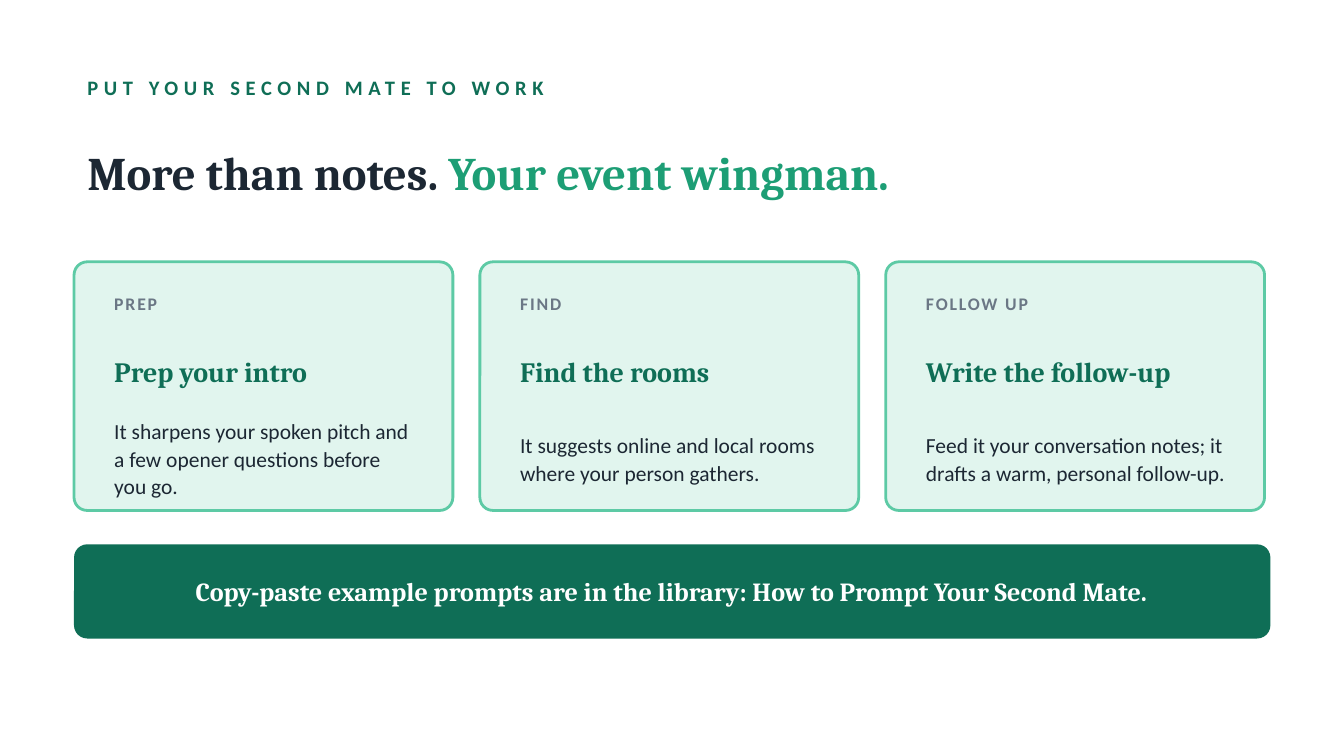
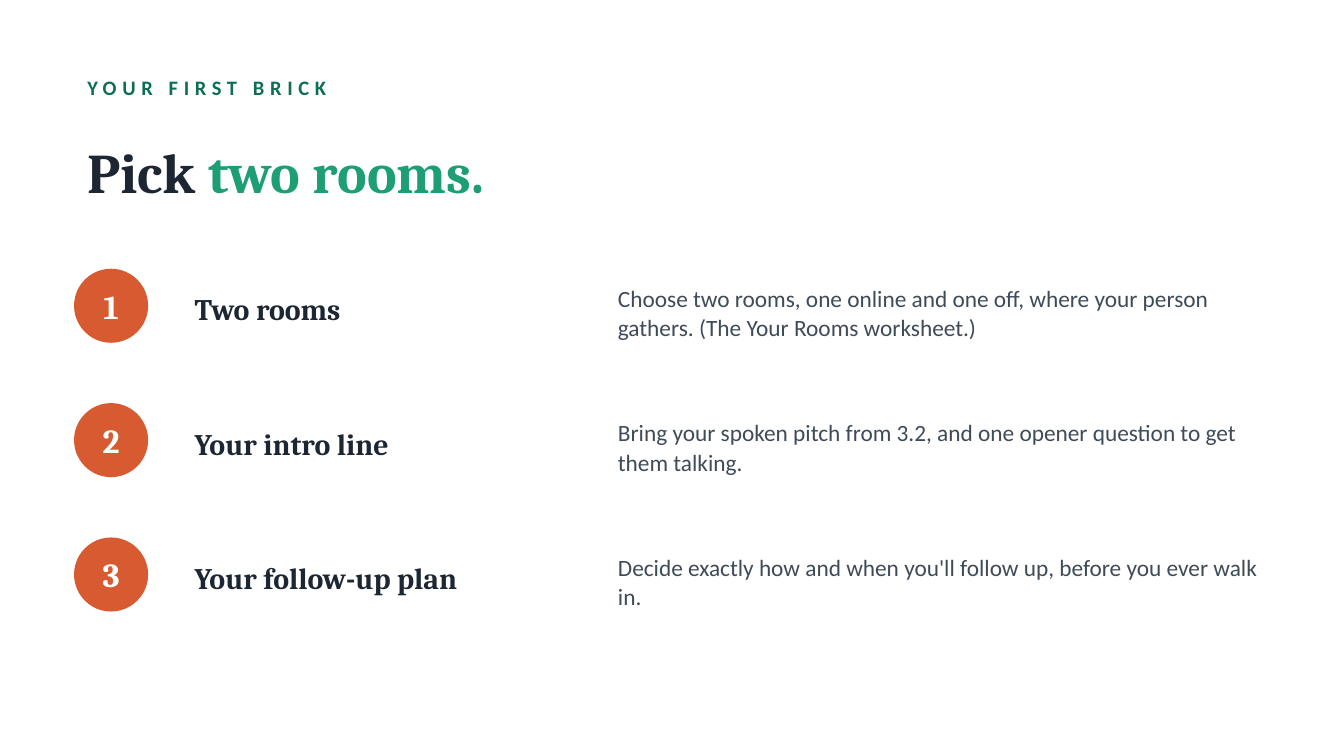
from pptx import Presentation
from pptx.dml.color import RGBColor
from pptx.enum import shapes, text
from pptx.util import Cm, Pt

COLORS = {
    "white": "FFFFFF",
    "ink": "1C2733",
    "slate": "3F4B59",
    "gray": "6B7785",
    "forest": "0F6E56",
    "green": "1D9E75",
    "mint": "5DCAA5",
    "pale": "E1F5EE",
    "orange": "D85A30",
}
SERIF = {"name": "Cambria", "bold": True}
SANS = {"name": "Calibri", "bold": False}
FORMATS = {
    "kicker": {**SANS, "size": Pt(11), "bold": True},
    "card_tag": {**SANS, "size": Pt(9.5), "bold": True},
    "card_title": {**SERIF, "size": Pt(15)},
    "card_body": {**SANS, "size": Pt(11.5)},
    "banner": {**SERIF, "size": Pt(14)},
    "number": {**SERIF, "size": Pt(18)},
    "step_title": {**SERIF, "size": Pt(16)},
    "step_body": {**SANS, "size": Pt(12.5)},
}
MARGIN = 1.4
CONTENT_WIDTH = 22.61

CARDS = [
    ("PREP", "Prep your intro",
     "It sharpens your spoken pitch and a few opener questions before you go."),
    ("FIND", "Find the rooms",
     "It suggests online and local rooms where your person gathers."),
    ("FOLLOW UP", "Write the follow-up",
     "Feed it your conversation notes; it drafts a warm, personal follow-up."),
]
STEPS = [
    ("Two rooms",
     "Choose two rooms, one online and one off, where your person gathers. "
     "(The Your Rooms worksheet.)"),
    ("Your intro line",
     "Bring your spoken pitch from 3.2, and one opener question to get them talking."),
    ("Your follow-up plan",
     "Decide exactly how and when you'll follow up, before you ever walk in."),
]


def rgb(color):
    return RGBColor.from_string(COLORS[color])


class Builder:
    def __init__(self):
        self.deck = Presentation()
        self.deck.slide_width = Cm(25.4)
        self.deck.slide_height = Cm(14.29)
        self.page = None

    def new_page(self, kicker, title, accent, size):
        self.page = self.deck.slides.add_slide(self.deck.slide_layouts[6])
        background = self.page.background.fill
        background.solid()
        background.fore_color.rgb = rgb("white")
        self.label((MARGIN, 1.27, CONTENT_WIDTH, 0.76), [(kicker, "forest")],
                   FORMATS["kicker"], tracking=3)
        self.label((MARGIN, 2.16, CONTENT_WIDTH, 2.16),
                   [(title, "ink"), (accent, "green")], {**SERIF, "size": Pt(size)})

    def label(self, area, parts, style, centered=False, spacing=None, tracking=None):
        box = self.page.shapes.add_textbox(*map(Cm, area))
        frame = box.text_frame
        frame.word_wrap = True
        frame.vertical_anchor = text.MSO_ANCHOR.MIDDLE
        para = frame.paragraphs[0]
        if centered:
            para.alignment = text.PP_ALIGN.CENTER
        if spacing:
            para.line_spacing = spacing
        for words, color in parts:
            span = para.add_run()
            span.text = words
            for key, value in style.items():
                setattr(span.font, key, value)
            span.font.color.rgb = rgb(color)
            if tracking:
                span._r.get_or_add_rPr().set("spc", str(tracking * 100))

    def shape(self, kind, area, fill, line=None, corner=None):
        shape = self.page.shapes.add_shape(kind, *map(Cm, area))
        shape.shadow.inherit = False
        shape.fill.solid()
        shape.fill.fore_color.rgb = rgb(fill)
        if line:
            shape.line.color.rgb = rgb(line)
            shape.line.width = Pt(1.5)
        else:
            shape.line.fill.background()
        if corner:
            shape.adjustments[0] = corner / min(area[2:])

    def panel(self, area, fill, line=None):
        self.shape(shapes.MSO_SHAPE.ROUNDED_RECTANGLE, area, fill, line, corner=0.25)

    def card(self, left, tag, title, body):
        self.panel((left, 4.95, 7.16, 4.7), "pale", "mint")
        inner, width = left + 0.51, 6.22
        self.label((inner, 5.36, width, 0.76), [(tag, "gray")],
                   FORMATS["card_tag"], tracking=1)
        self.label((inner, 6.12, width, 1.78), [(title, "forest")], FORMATS["card_title"])
        self.label((inner, 7.95, width, 1.4), [(body, "ink")],
                   FORMATS["card_body"], spacing=1.08)

    def banner(self, words):
        top, height = 10.29, 1.78
        self.panel((MARGIN, top, CONTENT_WIDTH, height), "forest")
        self.label((2.03, top, 21.34, height), [(words, "white")],
                   FORMATS["banner"], centered=True)

    def step(self, top, number, title, body):
        badge = (MARGIN, top + 0.13, 1.4, 1.4)
        self.shape(shapes.MSO_SHAPE.OVAL, badge, "orange")
        self.label(badge, [(str(number), "white")], FORMATS["number"], centered=True)
        self.label((3.43, top, 7.62, 1.78), [(title, "ink")], FORMATS["step_title"])
        self.label((11.43, top, 12.7, 1.9), [(body, "slate")],
                   FORMATS["step_body"], spacing=1.05)


def main():
    builder = Builder()

    builder.new_page("PUT YOUR SECOND MATE TO WORK", "More than notes. ",
                     "Your event wingman.", 25)
    for index, card in enumerate(CARDS):
        builder.card(MARGIN + index * 7.67, *card)
    builder.banner("Copy-paste example prompts are in the library: "
                   "How to Prompt Your Second Mate.")

    builder.new_page("YOUR FIRST BRICK", "Pick ", "two rooms.", 30)
    for index, step in enumerate(STEPS):
        builder.step(4.95 + index * 2.54, index + 1, *step)

    builder.deck.save("out.pptx")


if __name__ == "__main__":
    main()
